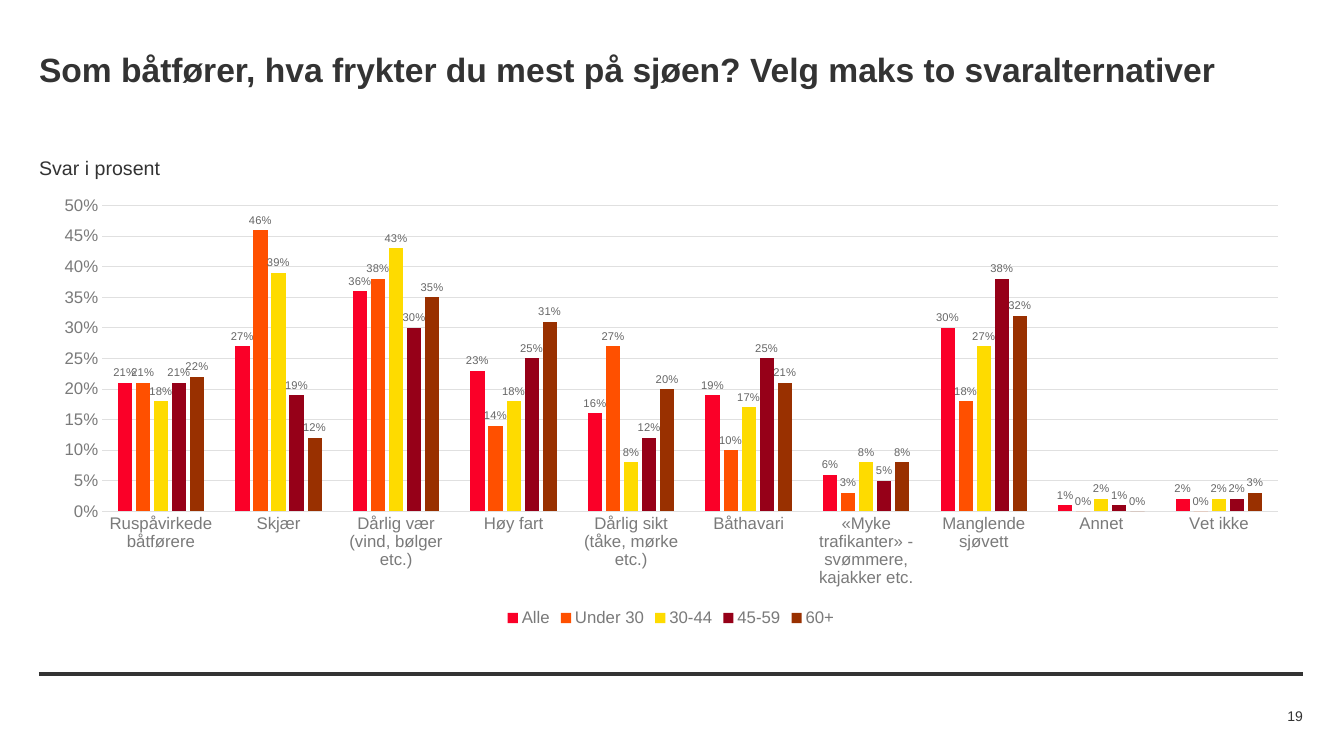
import pptx
import pptx.chart.data
import pptx.dml.color
import pptx.enum.chart
import pptx.enum.shapes
import pptx.enum.text
import pptx.oxml
import pptx.oxml.ns
import pptx.util

TITLE = "Som båtfører, hva frykter du mest på sjøen? Velg maks to svaralternativer"
UNIT = "Svar i prosent"
PAGE = "19"
FEARS = [
    "Ruspåvirkede båtførere", "Skjær", "Dårlig vær (vind, bølger etc.)",
    "Høy fart", "Dårlig sikt (tåke, mørke etc.)", "Båthavari",
    "«Myke trafikanter» - svømmere, kajakker etc.", "Manglende sjøvett",
    "Annet", "Vet ikke",
]
# age group, colour, share per fear in percent
AGES = [
    ("Alle", "red", [21, 27, 36, 23, 16, 19, 6, 30, 1, 2]),
    ("Under 30", "orange", [21, 46, 38, 14, 27, 10, 3, 18, 0, 0]),
    ("30-44", "yellow", [18, 39, 43, 18, 8, 17, 8, 27, 2, 2]),
    ("45-59", "wine", [21, 19, 30, 25, 12, 25, 5, 38, 1, 2]),
    ("60+", "brown", [22, 12, 35, 31, 20, 21, 8, 32, 0, 3]),
]
COLORS = {
    "ink": "333333", "axis": "7A7A7A", "label": "666666", "grid": "E0E0E0",
    "red": "FA0028", "orange": "FF5000", "yellow": "FEDB00",
    "wine": "960018", "brown": "993000",
}
FONT = "Arial"
WIDE, HIGH = 1344, 756
LEFT, SPAN = 39, 1264
CHART = (LEFT, 188, SPAN, 443)
PLOT = (103, 207, 1175, 306)
RULE = 674

Pt = pptx.util.Pt
ANCHOR = pptx.enum.text.MSO_ANCHOR
ALIGN = pptx.enum.text.PP_ALIGN


def px(n):
    return pptx.util.Emu(round(n * 914400 / 100.8))


def rgb(name):
    return pptx.dml.color.RGBColor.from_string(COLORS[name])


def style(font, size, color, bold=False):
    font.name, font.size, font.bold = FONT, Pt(size), bold
    font.color.rgb = rgb(color)


def stroke(line, color, width):
    line.color.rgb = rgb(color)
    line.width = Pt(width)


def write(shape, box, text, size, bold=False, anchor=ANCHOR.TOP, align=ALIGN.LEFT):
    shape.left, shape.top, shape.width, shape.height = map(px, box)
    frame = shape.text_frame
    frame.word_wrap = True
    frame.auto_size = pptx.enum.text.MSO_AUTO_SIZE.NONE
    frame.vertical_anchor = anchor
    frame.margin_left = frame.margin_right = 0
    frame.margin_top = frame.margin_bottom = 0
    para = frame.paragraphs[0]
    para.alignment = align
    run = para.add_run()
    run.text = text
    style(run.font, size, "ink", bold)


def pin(chart):
    """Fix the inner plot area as fractions of the chart."""
    x, y, w, h = PLOT
    left, top, wide, high = CHART
    parts = {"x": (x - left) / wide, "y": (y - top) / high,
             "w": w / wide, "h": h / high}
    modes = '<c:layoutTarget val="inner"/><c:xMode val="edge"/><c:yMode val="edge"/>'
    sizes = "".join(f'<c:{k} val="{v:.2f}"/>' for k, v in parts.items())
    space = pptx.oxml.ns.nsdecls("c")
    area = chart.plots[0]._element.getparent()
    for old in area.findall(pptx.oxml.ns.qn("c:layout")):
        area.remove(old)
    area.insert(0, pptx.oxml.parse_xml(
        f"<c:layout {space}><c:manualLayout>{modes}{sizes}</c:manualLayout></c:layout>"))


def draw(slide):
    """Add the column chart of fears by age group."""
    data = pptx.chart.data.CategoryChartData(number_format="0%")
    data.categories = FEARS
    for name, _, shares in AGES:
        data.add_series(name, [n / 100 for n in shares])
    kinds = pptx.enum.chart
    chart = slide.shapes.add_chart(
        kinds.XL_CHART_TYPE.COLUMN_CLUSTERED, *map(px, CHART), data).chart
    chart.has_title = False
    style(chart.font, 10, "ink")
    chart.has_legend = True
    chart.legend.position = kinds.XL_LEGEND_POSITION.BOTTOM
    chart.legend.include_in_layout = False
    style(chart.legend.font, 12, "axis")

    cats, vals = chart.category_axis, chart.value_axis
    for axis in (cats, vals):
        axis.major_tick_mark = axis.minor_tick_mark = kinds.XL_TICK_MARK.NONE
        style(axis.tick_labels.font, 12, "axis")
    stroke(cats.format.line, "grid", 0.75)
    vals.format.line.fill.background()
    vals.minimum_scale, vals.maximum_scale, vals.major_unit = 0, 0.5, 0.05
    vals.tick_labels.number_format = "0%"
    vals.tick_labels.number_format_is_linked = False
    stroke(vals.major_gridlines.format.line, "grid", 0.75)

    plot = chart.plots[0]
    plot.gap_width, plot.overlap, plot.vary_by_categories = 219, -27, False
    for bars, (_, color, _) in zip(plot.series, AGES):
        bars.invert_if_negative = False
        bars.format.fill.solid()
        bars.format.fill.fore_color.rgb = rgb(color)
        labels = bars.data_labels
        labels.show_value = True
        labels.number_format = "0%"
        labels.number_format_is_linked = False
        labels.position = kinds.XL_LABEL_POSITION.OUTSIDE_END
        style(labels.font, 8, "label")
    pin(chart)


def main():
    deck = pptx.Presentation()
    deck.slide_width, deck.slide_height = px(WIDE), px(HIGH)
    slide = deck.slides.add_slide(deck.slide_layouts[5])
    shapes = slide.shapes

    rule = shapes.add_connector(
        pptx.enum.shapes.MSO_CONNECTOR.STRAIGHT,
        px(LEFT), px(RULE), px(LEFT + SPAN), px(RULE))
    stroke(rule.line, "ink", 3)
    props = rule._element.spPr
    props.append(props.makeelement(pptx.oxml.ns.qn("a:effectLst"), {}))

    draw(slide)
    write(shapes.title, (LEFT, 47, SPAN, 44), TITLE, 24, True, ANCHOR.MIDDLE)
    write(shapes.add_textbox(0, 0, 0, 0), (LEFT, 156, 123, 24), UNIT, 14)
    write(shapes.add_textbox(0, 0, 0, 0), (1196, 705, 107, 22), PAGE, 10,
          anchor=ANCHOR.MIDDLE, align=ALIGN.RIGHT)
    deck.save("out.pptx")


if __name__ == "__main__":
    main()
